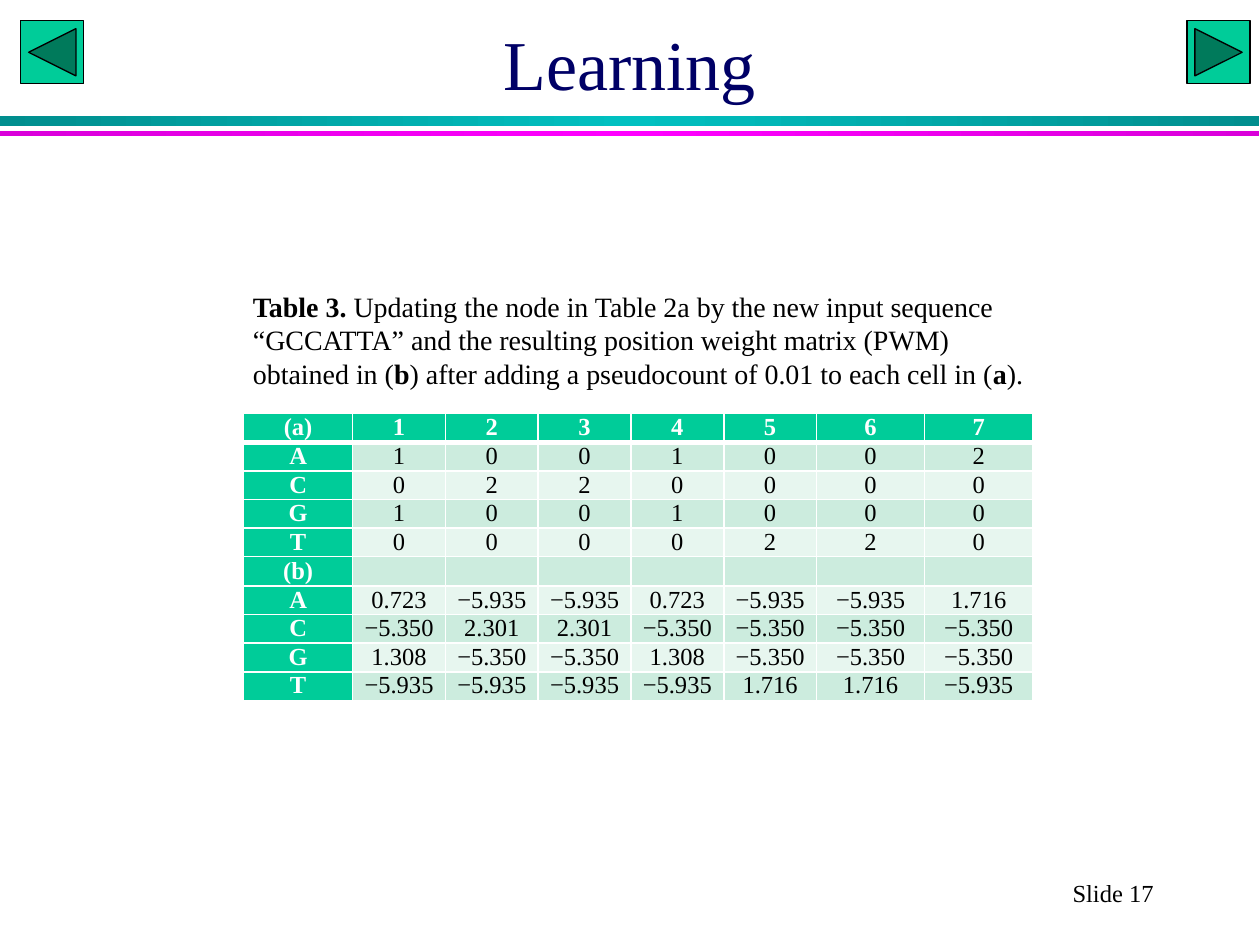
from copy import deepcopy

from lxml import etree
from pptx import Presentation
from pptx.dml.color import RGBColor
from pptx.enum.shapes import MSO_SHAPE as Shape
from pptx.enum.text import MSO_ANCHOR as Anchor, PP_ALIGN as Align
from pptx.oxml.ns import qn
from pptx.util import Cm, Pt

GREEN = "00CC99"
WHITE = "FFFFFF"
BANDS = ["CCECDE", "E7F6EF"]


def color(value):
    return RGBColor.from_string(value)


def add_run(paragraph, text, size, hex_color="000000", bold=False):
    run = paragraph.add_run()
    run.text = text
    font_format = {"name": "Times New Roman", "size": Pt(size), "bold": bold}
    for name, value in font_format.items():
        setattr(run.font, name, value)
    run.font.color.rgb = color(hex_color)


presentation = Presentation()
presentation.slide_width = Cm(25.4)
presentation.slide_height = Cm(19.05)
slide = presentation.slides.add_slide(presentation.slide_layouts[6])

# Two gradient rules under the title
rules = [(2.33, 0.21, "008E8E", "00C0C0"), (2.64, 0.1, "DA00DA", "FF00FF")]
for top, height, edge, middle in rules:
    rule = slide.shapes.add_shape(Shape.RECTANGLE, 0, Cm(top), Cm(25.38), Cm(height))
    rule.shadow.inherit = False
    rule.line.fill.background()
    rule.fill.gradient()
    rule.fill.gradient_angle = 0
    stop_list = rule.fill._fill._gradFill.gsLst
    stop_list.append(deepcopy(stop_list[0]))
    stops = zip(rule.fill.gradient_stops, [0, 0.5, 1], [edge, middle, edge])
    for stop, position, stop_color in stops:
        stop.position = position
        stop.color.rgb = color(stop_color)

# Navigation buttons
buttons = [
    (0.42, Shape.ACTION_BUTTON_BACK_OR_PREVIOUS),
    (23.93, Shape.ACTION_BUTTON_FORWARD_OR_NEXT),
]
for left, button_type in buttons:
    button = slide.shapes.add_shape(button_type, Cm(left), Cm(0.42), Cm(1.27), Cm(1.27))
    button.shadow.inherit = False
    button.fill.solid()
    button.fill.fore_color.rgb = color(GREEN)
    button.line.color.rgb = color("000000")
    button.line.width = Pt(0.75)

# Title, slide number and table caption: box, anchor, alignment, size, colour, runs
caption = [
    ("Table 3. ", True),
    ("Updating the node in Table 2a by the new input sequence “GCCATTA” and the "
     "resulting position weight matrix (PWM) obtained in (", False),
    ("b", True),
    (") after adding a pseudocount of 0.01 to each cell in (", False),
    ("a", True),
    (").", False),
]
texts = [
    ((1.9, 0, 21.59, 2.54), Anchor.MIDDLE, Align.CENTER, 40, "000066", [("Learning", False)]),
    ((19.9, 17.57, 5.08, 0.85), Anchor.TOP, Align.CENTER, 14, "000000", [("Slide 17", False)]),
    ((4.85, 5.71, 16.41, 2.31), Anchor.TOP, Align.LEFT, 16, "000000", caption),
]
for box, anchor, alignment, size, text_color, runs in texts:
    frame = slide.shapes.add_textbox(*map(Cm, box)).text_frame
    frame.word_wrap = True
    frame.vertical_anchor = anchor
    paragraph = frame.paragraphs[0]
    paragraph.alignment = alignment
    for text, bold in runs:
        add_run(paragraph, text, size, text_color, bold)

# Count matrix (a) and position weight matrix (b)
rows = [
    ["(a)", "1", "2", "3", "4", "5", "6", "7"],
    ["A", "1", "0", "0", "1", "0", "0", "2"],
    ["C", "0", "2", "2", "0", "0", "0", "0"],
    ["G", "1", "0", "0", "1", "0", "0", "0"],
    ["T", "0", "0", "0", "0", "2", "2", "0"],
    ["(b)", "", "", "", "", "", "", ""],
    ["A", "0.723", "−5.935", "−5.935", "0.723", "−5.935", "−5.935", "1.716"],
    ["C", "−5.350", "2.301", "2.301", "−5.350", "−5.350", "−5.350", "−5.350"],
    ["G", "1.308", "−5.350", "−5.350", "1.308", "−5.350", "−5.350", "−5.350"],
    ["T", "−5.935", "−5.935", "−5.935", "−5.935", "1.716", "1.716", "−5.935"],
]
column_widths = [2.2] + [1.87] * 5 + [2.18] * 2
table = slide.shapes.add_table(
    len(rows), len(column_widths), Cm(4.91), Cm(8.34), Cm(sum(column_widths)), Cm(5.77)
).table
table.first_col = True
for column, width in zip(table.columns, column_widths):
    column.width = Cm(width)

cell_format = {
    "margin_left": Cm(0.18),
    "margin_right": Cm(0.18),
    "margin_top": 0,
    "margin_bottom": 0,
    "vertical_anchor": Anchor.MIDDLE,
}
header_borders = {"a:lnL": 1, "a:lnR": 1, "a:lnT": 1, "a:lnB": 3}
for row_index, row in enumerate(rows):
    for column_index, text in enumerate(row):
        cell = table.cell(row_index, column_index)
        for name, value in cell_format.items():
            setattr(cell, name, value)
        if row_index == 0:
            properties = cell._tc.get_or_add_tcPr()
            for tag, width in header_borders.items():
                border = etree.SubElement(properties, qn(tag), w=str(Pt(width)))
                border_fill = etree.SubElement(border, qn("a:solidFill"))
                etree.SubElement(border_fill, qn("a:srgbClr"), val=WHITE)
        is_heading = row_index == 0 or column_index == 0
        cell.fill.solid()
        cell.fill.fore_color.rgb = color(GREEN if is_heading else BANDS[(row_index - 1) % 2])
        paragraph = cell.text_frame.paragraphs[0]
        paragraph.alignment = Align.CENTER
        paragraph.line_spacing = Pt(15)
        if text:
            add_run(paragraph, text, 14, WHITE if is_heading else "000000", is_heading)
        else:
            paragraph.font.size = Pt(14)

presentation.save("out.pptx")
